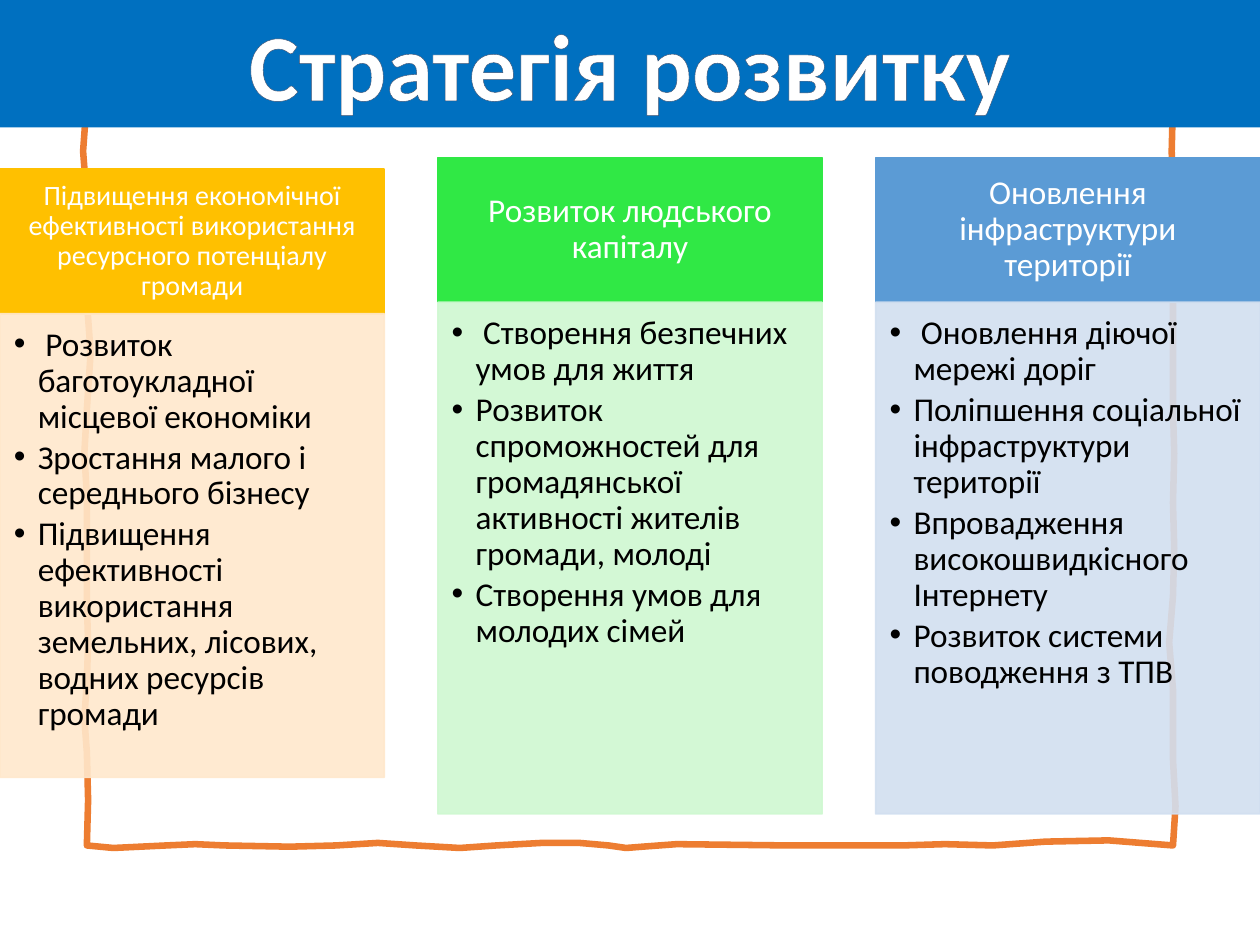
from lxml import etree
from pptx import Presentation
from pptx.dml.color import RGBColor
from pptx.enum.shapes import MSO_SHAPE
from pptx.enum.text import MSO_ANCHOR, MSO_AUTO_SIZE, PP_ALIGN
from pptx.oxml.ns import qn
from pptx.util import Inches, Pt

RECT = MSO_SHAPE.RECTANGLE
TOP, MIDDLE = MSO_ANCHOR.TOP, MSO_ANCHOR.MIDDLE
LEFT, CENTER = PP_ALIGN.LEFT, PP_ALIGN.CENTER
GROW = MSO_AUTO_SIZE.SHAPE_TO_FIT_TEXT

WHITE = RGBColor(0xFF, 0xFF, 0xFF)
BLACK = RGBColor(0, 0, 0)
BLUE = RGBColor(0x00, 0x70, 0xC0)
ORANGE = RGBColor(0xED, 0x7D, 0x31)
GOLD = RGBColor(0xFF, 0xC0, 0x00)
PEACH = RGBColor(0xFF, 0xE8, 0xCC)
GREEN = RGBColor(0x30, 0xE8, 0x45)
MINT = RGBColor(0xCF, 0xF8, 0xD1)
SKY = RGBColor(0x5B, 0x9B, 0xD5)
MIST = RGBColor(0xD2, 0xDF, 0xF0)


def write(shape, lines, size, color, align=CENTER, anchor=MIDDLE, pads=(0.1, 0.05, 0.1, 0.05),
          bold=False, spacing=0.9, after=0, bullet=False):
    frame = shape.text_frame
    frame.word_wrap = True
    frame.vertical_anchor = anchor
    frame.margin_left, frame.margin_top, frame.margin_right, frame.margin_bottom = map(Inches, pads)
    for i, line in enumerate(lines):
        para = frame.add_paragraph() if i else frame.paragraphs[0]
        para.alignment = align
        para.line_spacing = spacing
        para.space_after = Pt(after)
        run = para.add_run()
        run.text = line
        run.font.name = "Calibri"
        run.font.size = Pt(size)
        run.font.bold = bold
        run.font.color.rgb = color
        if bullet:
            props = para._p.get_or_add_pPr()
            props.set("marL", str(Inches(0.19)))
            props.set("indent", str(Inches(-0.19)))
            etree.SubElement(props, qn("a:buFont"), typeface="Arial")
            etree.SubElement(props, qn("a:buChar"), char="•")


def add_box(left, top, height, color, alpha=100):
    box = slide.shapes.add_shape(RECT, Inches(left), Inches(top), Inches(WIDTH), Inches(height))
    box.shadow.inherit = False
    box.fill.solid()
    box.fill.fore_color.rgb = color
    box.line.color.rgb = color
    box.line.width = Pt(1)
    if alpha < 100:
        for tint in box.element.spPr.iter(qn("a:srgbClr")):
            etree.SubElement(tint, qn("a:alpha"), val=str(alpha * 1000))
    return box


deck = Presentation()
deck.slide_width, deck.slide_height = Inches(10), Inches(7.5)
slide = deck.slides.add_slide(deck.slide_layouts[5])

# Hand-drawn frame, clockwise from the lower left corner
EDGE = [
    (0.69, 6.71), (0.9, 6.73), (1.32, 6.71), (1.55, 6.7), (1.78, 6.71), (2.3, 6.72),
    (2.67, 6.71), (3, 6.69), (3.3, 6.71), (3.65, 6.73), (3.94, 6.71), (4.3, 6.69),
    (4.6, 6.69), (4.83, 6.71), (4.97, 6.73), (5.1, 6.72), (5.37, 6.7), (6.26, 6.71),
    (7.16, 6.71), (7.5, 6.7), (7.88, 6.71), (8.3, 6.68), (8.8, 6.67), (9.31, 6.71),
    (9.33, 6.4), (9.31, 6.03), (9.31, 5.47), (9.28, 5.1), (9.31, 4.73), (9.32, 4.35),
    (9.31, 3.99), (9.32, 3.6), (9.31, 3.25), (9.31, 2.45), (9.31, 1.65), (9.3, 1.2),
    (9.31, 0.79), (0.69, 0.79), (0.66, 1.2), (0.69, 1.59), (0.69, 2.39), (0.72, 2.8),
    (0.69, 3.25), (0.67, 3.6), (0.69, 3.93), (0.69, 4.79), (0.7, 5.1), (0.69, 5.41),
    (0.67, 5.7), (0.69, 5.97), (0.7, 6.35),
]
pen = slide.shapes.build_freeform(Inches(EDGE[0][0]), Inches(EDGE[0][1]))
pen.add_line_segments([(Inches(x), Inches(y)) for x, y in EDGE[1:]], close=True)
frame = pen.convert_to_shape()
frame.shadow.inherit = False
frame.fill.background()
frame.line.color.rgb = ORANGE
frame.line.width = Pt(3.75)

# Title band, brought in front of the frame
title = slide.shapes.title
slide.shapes.element.append(title.element)
title.left, title.top, title.width, title.height = 0, 0, Inches(10), Inches(1.01)
title.fill.solid()
title.fill.fore_color.rgb = BLUE
write(title, ["Стратегія розвитку"], 54, WHITE, anchor=TOP, bold=True, spacing=1.0, after=6)
title.text_frame.auto_size = GROW
props = title.text_frame.paragraphs[0].runs[0].font._element
rim = etree.Element(qn("a:ln"), w=str(Pt(1)))
tint = etree.SubElement(etree.SubElement(rim, qn("a:solidFill")), qn("a:srgbClr"))
tint.set("val", "3A5274")
props.insert(0, rim)

# Three goal columns: heading, size, top, body height, colours, points
WIDTH, HEAD = 3.05, 1.15
STEP = (10 - WIDTH) / 2
GOALS = [
    ("Підвищення економічної ефективності використання ресурсного потенціалу громади",
     16, 1.34, 3.68, GOLD, PEACH,
     [" Розвиток баготоукладної місцевої економіки",
      "Зростання малого і середнього бізнесу",
      "Підвищення ефективності використання земельних, лісових, водних ресурсів громади"]),
    ("Розвиток людського капіталу", 19, 1.25, 4.06, GREEN, MINT,
     [" Створення безпечних умов для життя",
      "Розвиток спроможностей для громадянської активності жителів громади, молоді",
      "Створення умов для молодих сімей"]),
    ("Оновлення інфраструктури території", 19, 1.25, 4.06, SKY, MIST,
     [" Оновлення діючої мережі доріг",
      "Поліпшення соціальної інфраструктури території",
      "Впровадження високошвидкісного Інтернету",
      "Розвиток системи поводження з ТПВ"]),
]
for i, (goal, size, top, height, dark, pale, points) in enumerate(GOALS):
    side = 0.12 if size == 16 else 0.15
    head = add_box(i * STEP, top, HEAD, dark)
    write(head, [goal], size, WHITE, pads=(side, 0.08, side, 0.08))
    body = add_box(i * STEP, top + HEAD, height, pale, alpha=90)
    write(body, points, 19, BLACK, align=LEFT, anchor=TOP, pads=(0.11, 0.11, 0.15, 0.17),
          after=2.85, bullet=True)

deck.save("out.pptx")
